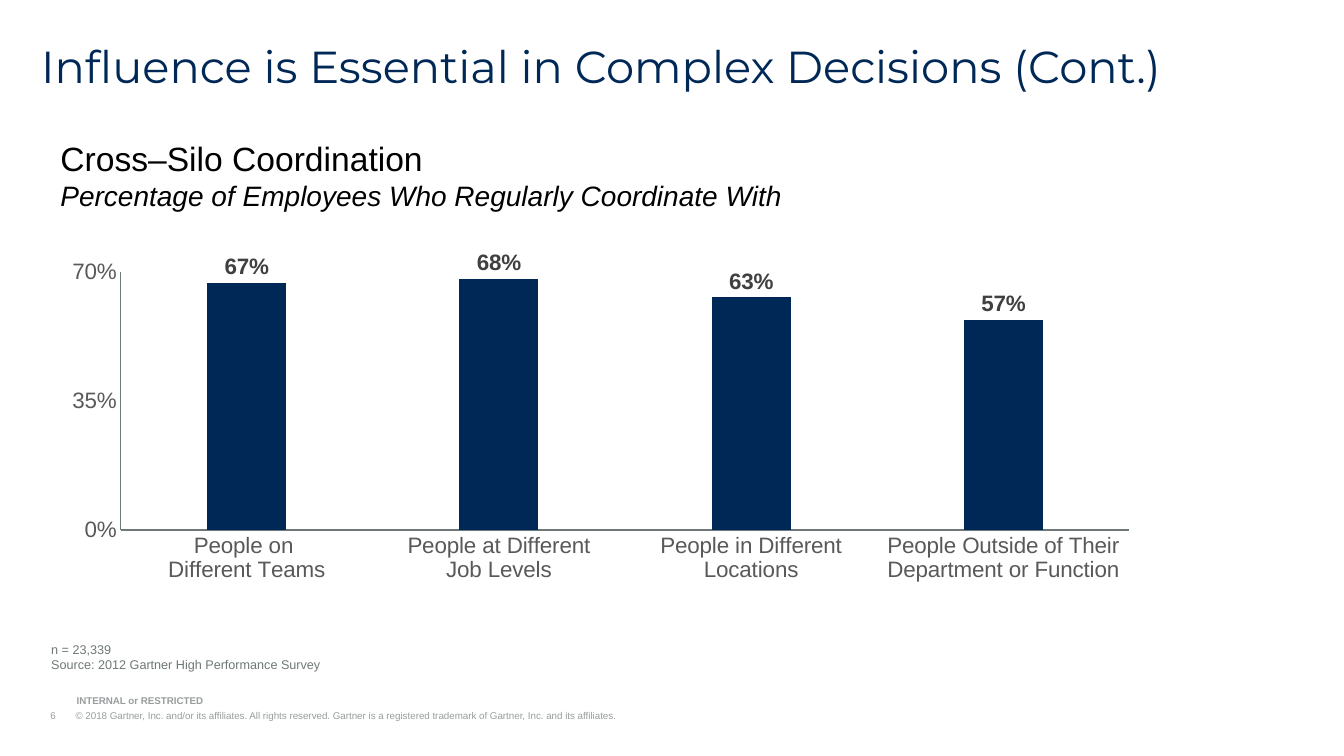
from dataclasses import dataclass

import pptx
import pptx.chart.data
import pptx.dml.color
import pptx.enum.chart
import pptx.enum.text
import pptx.oxml
import pptx.oxml.ns
import pptx.util
from pptx.util import Inches


@dataclass(frozen=True)
class Theme:
    navy: str = "002856"
    black: str = "000000"
    gray: str = "6F7878"
    pale: str = "979D9D"
    axis: str = "595959"
    label: str = "404040"
    body: str = "Arial"
    head: str = "Montserrat"
    title: int = 32
    topic: int = 24
    detail: int = 20
    chart: int = 16
    note: int = 9
    legal: int = 7


THEME = Theme()


def rgb(code):
    return pptx.dml.color.RGBColor.from_string(code)


def style(font, size, color, face=THEME.body, bold=False, italic=False):
    font.name = face
    font.size = pptx.util.Pt(size)
    font.bold = bold
    font.italic = italic
    font.color.rgb = rgb(color)


def write(para, text, **form):
    run = para.add_run()
    run.text = text
    style(run.font, **form)


def add_box(slide, left, top, width, height, grow=True):
    box = slide.shapes.add_textbox(*map(Inches, (left, top, width, height)))
    frame = box.text_frame
    frame.word_wrap = True
    sizes = pptx.enum.text.MSO_AUTO_SIZE
    frame.auto_size = sizes.SHAPE_TO_FIT_TEXT if grow else sizes.NONE
    return frame


def add_title(slide, text):
    para = add_box(slide, 0.31, 0.39, 12.8, 0.48, grow=False).paragraphs[0]
    para.line_spacing = 0.9
    para.space_after = pptx.util.Pt(12)
    write(para, text, size=THEME.title, color=THEME.navy, face=THEME.head)


def add_topic(slide, topic, detail):
    para = add_box(slide, 0.5, 1.32, 12.08, 0.84).paragraphs[0]
    write(para, topic, size=THEME.topic, color=THEME.black)
    para.add_line_break()
    write(para, detail, size=THEME.detail, color=THEME.black, italic=True)


def add_notes(slide, lines):
    frame = add_box(slide, 0.41, 6.32, 10.15, 0.4)
    for i, line in enumerate(lines):
        para = frame.add_paragraph() if i else frame.paragraphs[0]
        write(para, line, size=THEME.note, color=THEME.gray)


def add_legal(slide, text, left, top, width, bold=False):
    """Add a small footer line with a hanging indent and a tab stop."""
    frame = add_box(slide, left, top, width, 0.12)
    frame.vertical_anchor = pptx.enum.text.MSO_ANCHOR.BOTTOM
    frame.margin_left = frame.margin_right = 0
    frame.margin_top = frame.margin_bottom = 0
    para = frame.paragraphs[0]
    indent = Inches(0.25)
    props = para._p.get_or_add_pPr()
    props.set("marL", str(indent))
    props.set("indent", str(-indent))
    props.append(pptx.oxml.parse_xml(
        f'<a:tabLst {pptx.oxml.ns.nsdecls("a")}>'
        f'<a:tab pos="{indent}" algn="l"/></a:tabLst>'))
    write(para, text, size=THEME.legal, color=THEME.pale, bold=bold)


def style_axis(axis):
    axis.has_major_gridlines = False
    axis.major_tick_mark = pptx.enum.chart.XL_TICK_MARK.NONE
    axis.minor_tick_mark = pptx.enum.chart.XL_TICK_MARK.NONE
    axis.format.line.color.rgb = rgb(THEME.gray)
    axis.format.line.width = pptx.util.Pt(1)
    style(axis.tick_labels.font, THEME.chart, THEME.axis)


def add_bars(slide, shares):
    data = pptx.chart.data.CategoryChartData(number_format="0%")
    data.categories = shares.keys()
    data.add_series("Series 1", shares.values())
    kind = pptx.enum.chart.XL_CHART_TYPE.COLUMN_CLUSTERED
    place = map(Inches, (0.5, 2.49, 10.92, 3.35))
    chart = slide.shapes.add_chart(kind, *place, data).chart
    chart.has_legend = False
    chart.has_title = False
    style(chart.font, THEME.chart, THEME.black)

    style_axis(chart.category_axis)
    scale = chart.value_axis
    style_axis(scale)
    scale.minimum_scale, scale.maximum_scale = 0, 0.7
    scale.major_unit = 0.35
    scale.tick_labels.number_format = "0%"
    scale.tick_labels.number_format_is_linked = False

    plot = chart.plots[0]
    plot.vary_by_categories = False
    plot.gap_width, plot.overlap = 219, -27
    fill = plot.series[0].format.fill
    fill.solid()
    fill.fore_color.rgb = rgb(THEME.navy)
    labels = plot.series[0].data_labels
    labels.show_value = True
    labels.position = pptx.enum.chart.XL_LABEL_POSITION.OUTSIDE_END
    labels.number_format = "0%"
    labels.number_format_is_linked = False
    style(labels.font, THEME.chart, THEME.label, bold=True)


def main():
    deck = pptx.Presentation()
    deck.slide_width, deck.slide_height = Inches(13.33), Inches(7.5)
    slide = deck.slides.add_slide(deck.slide_layouts[6])
    add_legal(slide, "6\t© 2018 Gartner, Inc. and/or its affiliates. All rights "
              "reserved. Gartner is a registered trademark of Gartner, Inc. "
              "and its affiliates.", 0.5, 7.04, 7.99)
    add_legal(slide, "INTERNAL or RESTRICTED", 0.76, 6.89, 2.53, bold=True)
    add_notes(slide, ["n = 23,339",
                      "Source: 2012 Gartner High Performance Survey"])
    add_topic(slide, "Cross–Silo Coordination",
              "Percentage of Employees Who Regularly Coordinate With")
    add_bars(slide, {
        "People on \nDifferent Teams": 0.67,
        "People at Different\nJob Levels": 0.68,
        "People in Different Locations": 0.63,
        "People Outside of Their\nDepartment or Function": 0.57,
    })
    add_title(slide, "Influence is Essential in Complex Decisions (Cont.)")
    deck.save("out.pptx")


if __name__ == "__main__":
    main()
